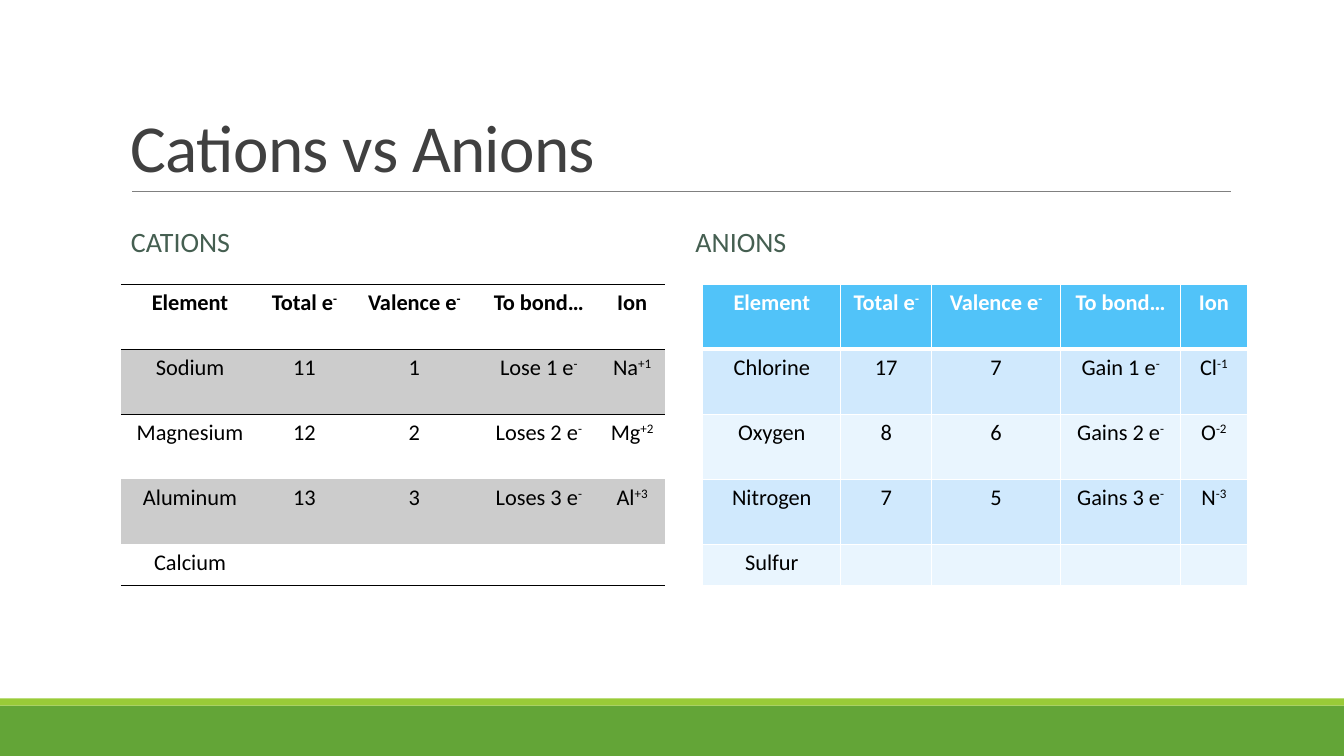
import dataclasses

import pptx
import pptx.dml.color
import pptx.enum.shapes
import pptx.enum.text
import pptx.oxml.ns
import pptx.util
from lxml import etree

TITLE = "Cations vs Anions"
# A caret starts a superscript.
HEADER = ["Element", "Total e^-", "Valence e^-", "To bond…", "Ion"]
CATIONS = [
    ["Sodium", "11", "1", "Lose 1 e^-", "Na^+1"],
    ["Magnesium", "12", "2", "Loses 2 e^-", "Mg^+2"],
    ["Aluminum", "13", "3", "Loses 3 e^-", "Al^+3"],
    ["Calcium", "", "", "", ""],
]
ANIONS = [
    ["Chlorine", "17", "7", "Gain 1 e^-", "Cl^-1"],
    ["Oxygen", "8", "6", "Gains 2 e^-", "O^-2"],
    ["Nitrogen", "7", "5", "Gains 3 e^-", "N^-3"],
    ["Sulfur", "", "", "", ""],
]


@dataclasses.dataclass(frozen=True)
class Theme:
    font: str = "Calibri"
    title_size: int = 48
    heading_size: int = 20
    cell_size: int = 16
    title: str = "404040"
    heading: str = "455F51"
    rule: str = "808080"
    footer: str = "63A537"
    footer_edge: str = "99CB38"
    black: str = "000000"
    white: str = "FFFFFF"


@dataclasses.dataclass(frozen=True)
class TableLook:
    header_text: str
    header_fill: str | None
    bands: tuple


THEME = Theme()
CATION_LOOK = TableLook(THEME.black, None, ("CCCCCC", None))
ANION_LOOK = TableLook(THEME.white, "51C3F9", ("D0E9FD", "E9F5FE"))

# Grid, in inches
SLIDE_W, SLIDE_H = 13.33, 7.5
MARGIN, PANEL_W, GUTTER = 1.2, 5.4, 0.2
RIGHT_PANEL = MARGIN + PANEL_W + GUTTER
RIGHT_TABLE = 6.97
TITLE_TOP, RULE_Y, HEADING_TOP, TABLE_TOP = 0.31, 1.9, 2.02, 2.82
FOOTER_H, EDGE_H = 0.5, 0.07
COLUMNS = [1.37, 0.9, 1.28, 1.19, 0.66]
ROWS = [0.645] * 4 + [0.41]
PLAIN_STYLE = "{2D5ABB26-0587-4C30-8999-92F81FD0307C}"

inches = pptx.util.Inches
rgb = pptx.dml.color.RGBColor.from_string
ALIGN = pptx.enum.text.PP_ALIGN
ANCHOR = pptx.enum.text.MSO_ANCHOR


def style_run(run, size, color, bold=False):
    run.font.name = THEME.font
    run.font.size = pptx.util.Pt(size)
    run.font.color.rgb = rgb(color)
    run.font.bold = bold


def add_label(slide, text, box, size, color, anchor):
    label = slide.shapes.add_textbox(*map(inches, box))
    frame = label.text_frame
    frame.word_wrap = True
    frame.vertical_anchor = anchor
    frame.text = text
    paragraph = frame.paragraphs[0]
    style_run(paragraph.runs[0], size, color)
    return paragraph


def add_band(slide, top, height, color):
    band = slide.shapes.add_shape(
        pptx.enum.shapes.MSO_SHAPE.RECTANGLE,
        0, inches(top), inches(SLIDE_W), inches(height))
    band.shadow.inherit = False
    band.fill.solid()
    band.fill.fore_color.rgb = rgb(color)
    band.line.fill.background()


def add_rule(slide):
    left = MARGIN + 0.11
    rule = slide.shapes.add_connector(
        pptx.enum.shapes.MSO_CONNECTOR.STRAIGHT,
        *map(inches, (left, RULE_Y, left + 10.9, RULE_Y)))
    rule.line.color.rgb = rgb(THEME.rule)
    rule.line.width = pptx.util.Pt(0.5)
    etree.SubElement(rule._element.spPr, pptx.oxml.ns.qn("a:effectLst"))


def set_borders(cell, borders):
    """Draw borders given as {side: (colour, points)}, before the cell is filled."""
    qn = pptx.oxml.ns.qn
    properties = cell._tc.get_or_add_tcPr()
    for side in "LRTB":
        if side in borders:
            color, width = borders[side]
            line = etree.SubElement(properties, qn(f"a:ln{side}"),
                                    w=str(pptx.util.Pt(width)))
            fill = etree.SubElement(line, qn("a:solidFill"))
            etree.SubElement(fill, qn("a:srgbClr"), val=color)


def cation_borders(row):
    black = (THEME.black, 1)
    if row == 0:
        return {"T": black, "B": black}
    if row == 1:
        return {"T": black}
    return {"B": black} if row == len(ROWS) - 1 else {}


def anion_borders(row):
    borders = dict.fromkeys("LRTB", (THEME.white, 1))
    if row < 2:
        borders["B" if row == 0 else "T"] = (THEME.white, 3)
    return borders


def fill_cell(cell, text, color, bold, background):
    if background:
        cell.fill.solid()
        cell.fill.fore_color.rgb = rgb(background)
    else:
        cell.fill.background()
    paragraph = cell.text_frame.paragraphs[0]
    paragraph.alignment = ALIGN.CENTER
    if not text:
        paragraph.font.size = pptx.util.Pt(THEME.cell_size)
        return
    for index, part in enumerate(text.split("^")):
        run = paragraph.add_run()
        run.text = part
        style_run(run, THEME.cell_size, color, bold)
        if index:
            run._r.get_or_add_rPr().set("baseline", "30000")


def add_ion_table(slide, left, elements, look, borders_for):
    frame = slide.shapes.add_table(
        len(ROWS), len(COLUMNS),
        *map(inches, (left, TABLE_TOP, PANEL_W, sum(ROWS))))
    table = frame.table
    table.first_row = table.horz_banding = False
    table._tbl.tblPr.find(pptx.oxml.ns.qn("a:tableStyleId")).text = PLAIN_STYLE
    for column, width in zip(table.columns, COLUMNS):
        column.width = inches(width)
    for row, height in zip(table.rows, ROWS):
        row.height = inches(height)
    for r, texts in enumerate([HEADER] + elements):
        is_header = r == 0
        color = look.header_text if is_header else THEME.black
        background = look.header_fill if is_header else look.bands[(r - 1) % 2]
        for c, text in enumerate(texts):
            cell = table.cell(r, c)
            set_borders(cell, borders_for(r))
            fill_cell(cell, text, color, is_header, background)


def main():
    deck = pptx.Presentation()
    deck.slide_width, deck.slide_height = inches(SLIDE_W), inches(SLIDE_H)
    slide = deck.slides.add_slide(deck.slide_layouts[6])

    footer_top = SLIDE_H - FOOTER_H
    add_band(slide, footer_top, FOOTER_H, THEME.footer)
    add_band(slide, footer_top - EDGE_H, EDGE_H, THEME.footer_edge)
    add_rule(slide)

    title = add_label(slide, TITLE,
                      (MARGIN, TITLE_TOP, 2 * PANEL_W + GUTTER, RULE_Y - TITLE_TOP),
                      THEME.title_size, THEME.title, ANCHOR.BOTTOM)
    title.line_spacing = 0.85
    title.runs[0]._r.get_or_add_rPr().set("spc", "-50")

    panels = [
        ("CATIONS", MARGIN, MARGIN, CATIONS, CATION_LOOK, cation_borders),
        ("ANIONS", RIGHT_PANEL, RIGHT_TABLE, ANIONS, ANION_LOOK, anion_borders),
    ]
    for name, left, table_left, elements, look, borders_for in panels:
        heading = add_label(slide, name,
                            (left, HEADING_TOP, PANEL_W, TABLE_TOP - HEADING_TOP),
                            THEME.heading_size, THEME.heading, ANCHOR.MIDDLE)
        heading.line_spacing = 0.9
        heading.space_before = pptx.util.Pt(12)
        heading.space_after = pptx.util.Pt(2)
        add_ion_table(slide, table_left, elements, look, borders_for)

    deck.save("out.pptx")


if __name__ == "__main__":
    main()
